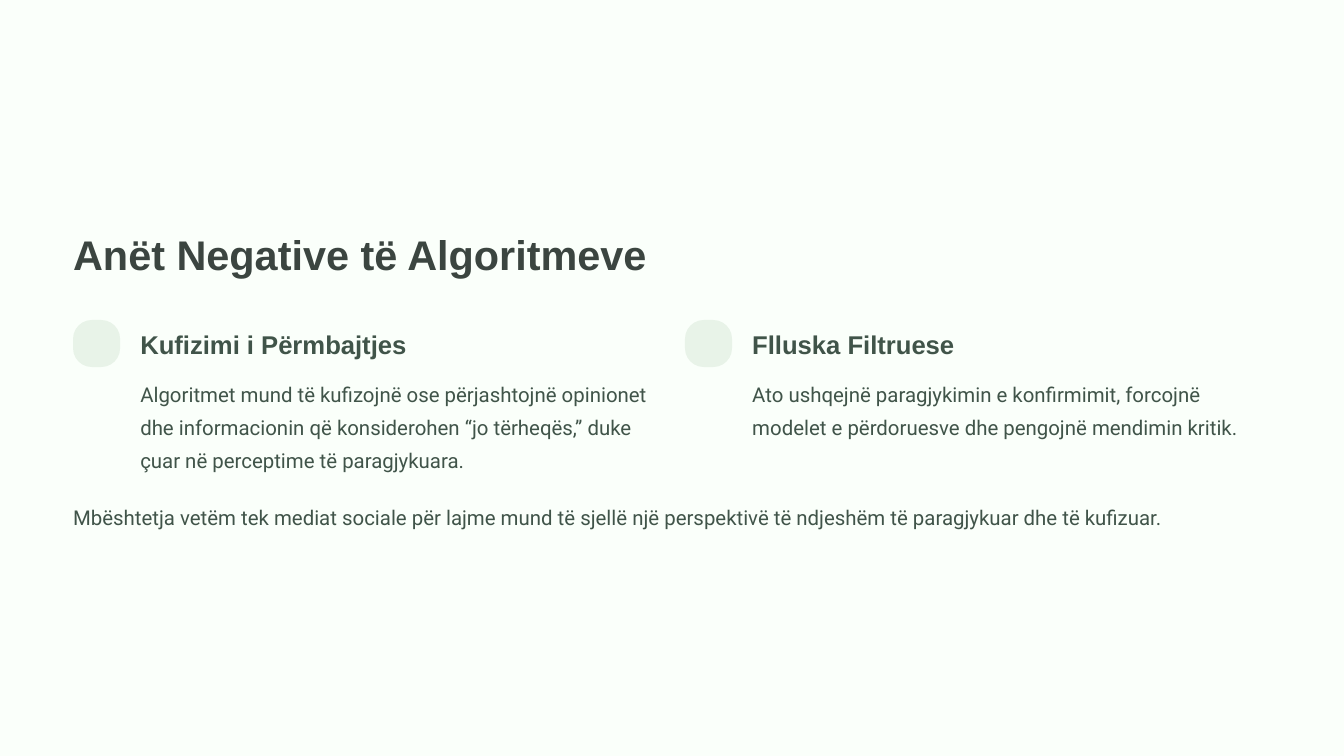
import dataclasses

import pptx
import pptx.dml.color
import pptx.enum.shapes
import pptx.enum.text
import pptx.util

SLIDE_WIDTH, SLIDE_HEIGHT = 16, 9
MARGIN = 0.87
CONTENT_WIDTH = SLIDE_WIDTH - 2 * MARGIN
COLUMN_GAP = 0.31
COLUMN_WIDTH = (CONTENT_WIDTH - COLUMN_GAP) / 2
BADGE_SIZE = 0.56
TEXT_INDENT = 0.8
TITLE_TOP, BADGE_TOP, HEADING_TOP, BODY_TOP, CLOSING_TOP = 2.7, 3.81, 3.9, 4.44, 5.91

TITLE = "Anët Negative të Algoritmeve"
POINTS = [
    ("Kufizimi i Përmbajtjes",
     "Algoritmet mund të kufizojnë ose përjashtojnë opinionet dhe informacionin "
     "që konsiderohen “jo tërheqës,” duke çuar në perceptime të paragjykuara."),
    ("Flluska Filtruese",
     "Ato ushqejnë paragjykimin e konfirmimit, forcojnë modelet e përdoruesve "
     "dhe pengojnë mendimin kritik."),
]
CLOSING = ("Mbështetja vetëm tek mediat sociale për lajme mund të sjellë një "
           "perspektivë të ndjeshëm të paragjykuar dhe të kufizuar.")


@dataclasses.dataclass(frozen=True)
class TextStyle:
    """Font, size, line spacing, colour and weight of one kind of text."""
    font: str
    size: float
    spacing: float
    color: str
    bold: bool = False


@dataclasses.dataclass(frozen=True)
class Theme:
    """Colours and text styles of the slide."""
    background: str = "FAFFFA"
    badge: str = "E8F3E8"
    title: TextStyle = TextStyle("Arial", 35.5, 44.5, "3B4540", True)
    heading: TextStyle = TextStyle("Arial", 22, 27.5, "405449", True)
    body: TextStyle = TextStyle("Roboto", 17.5, 28.5, "405449")


THEME = Theme()


def paint(fill, color):
    """Give a fill one solid colour."""
    fill.solid()
    fill.fore_color.rgb = pptx.dml.color.RGBColor.from_string(color)


def add_text(page, text, style, left, top, width, height, wrap=False):
    """Add a text box without insets in the given style."""
    box = page.shapes.add_textbox(*map(pptx.util.Inches, (left, top, width, height)))
    frame = box.text_frame
    frame.margin_left = frame.margin_top = frame.margin_right = frame.margin_bottom = 0
    frame.vertical_anchor = pptx.enum.text.MSO_ANCHOR.TOP
    frame.word_wrap = wrap
    frame.text = text
    para = frame.paragraphs[0]
    para.alignment = pptx.enum.text.PP_ALIGN.LEFT
    para.line_spacing = pptx.util.Pt(style.spacing)
    font = para.runs[0].font
    font.name, font.size, font.bold = style.font, pptx.util.Pt(style.size), style.bold
    font.color.rgb = pptx.dml.color.RGBColor.from_string(style.color)


def add_badge(page, left, top):
    """Add a plain rounded square."""
    badge = page.shapes.add_shape(
        pptx.enum.shapes.MSO_SHAPE.ROUNDED_RECTANGLE,
        *map(pptx.util.Inches, (left, top, BADGE_SIZE, BADGE_SIZE)))
    badge.adjustments[0] = 0.4
    badge.shadow.inherit = False
    badge.line.fill.background()
    paint(badge.fill, THEME.badge)


def add_point(page, column, heading, body):
    """Add a badge, heading and body text in one column."""
    left = MARGIN + column * (COLUMN_WIDTH + COLUMN_GAP)
    text_left = left + TEXT_INDENT
    text_width = COLUMN_WIDTH - TEXT_INDENT
    add_badge(page, left, BADGE_TOP)
    add_text(page, heading, THEME.heading, text_left, HEADING_TOP, text_width, 0.39)
    add_text(page, body, THEME.body, text_left, BODY_TOP, text_width, 1.19, wrap=True)


def main():
    """Build the slide and save the deck."""
    deck = pptx.Presentation()
    deck.slide_width = pptx.util.Inches(SLIDE_WIDTH)
    deck.slide_height = pptx.util.Inches(SLIDE_HEIGHT)
    page = deck.slides.add_slide(deck.slide_layouts[6])
    paint(page.background.fill, THEME.background)
    add_text(page, TITLE, THEME.title, MARGIN, TITLE_TOP, COLUMN_WIDTH, 0.62)
    for column, (heading, body) in enumerate(POINTS):
        add_point(page, column, heading, body)
    add_text(page, CLOSING, THEME.body, MARGIN, CLOSING_TOP, CONTENT_WIDTH, 0.4)
    deck.save("out.pptx")


if __name__ == "__main__":
    main()
